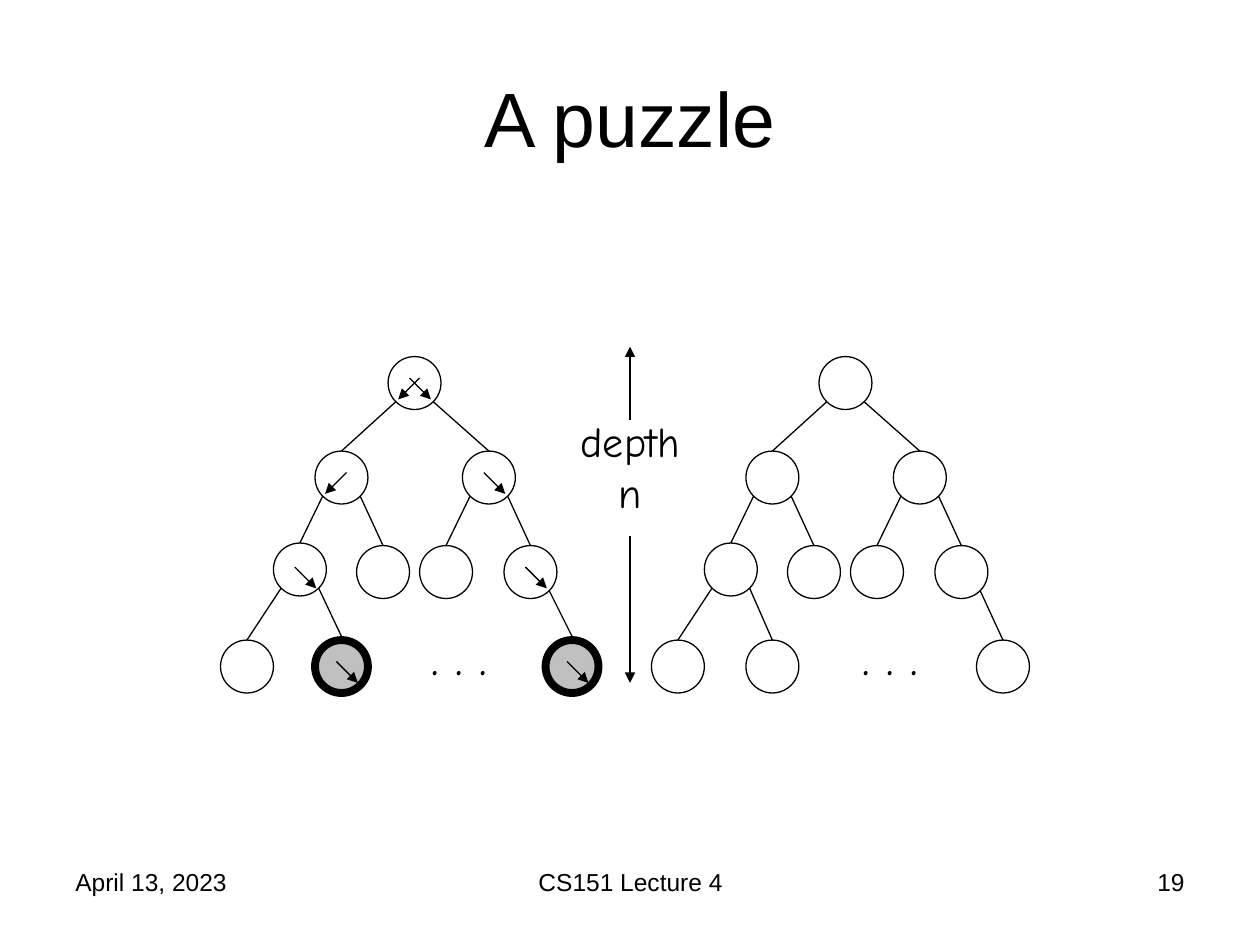
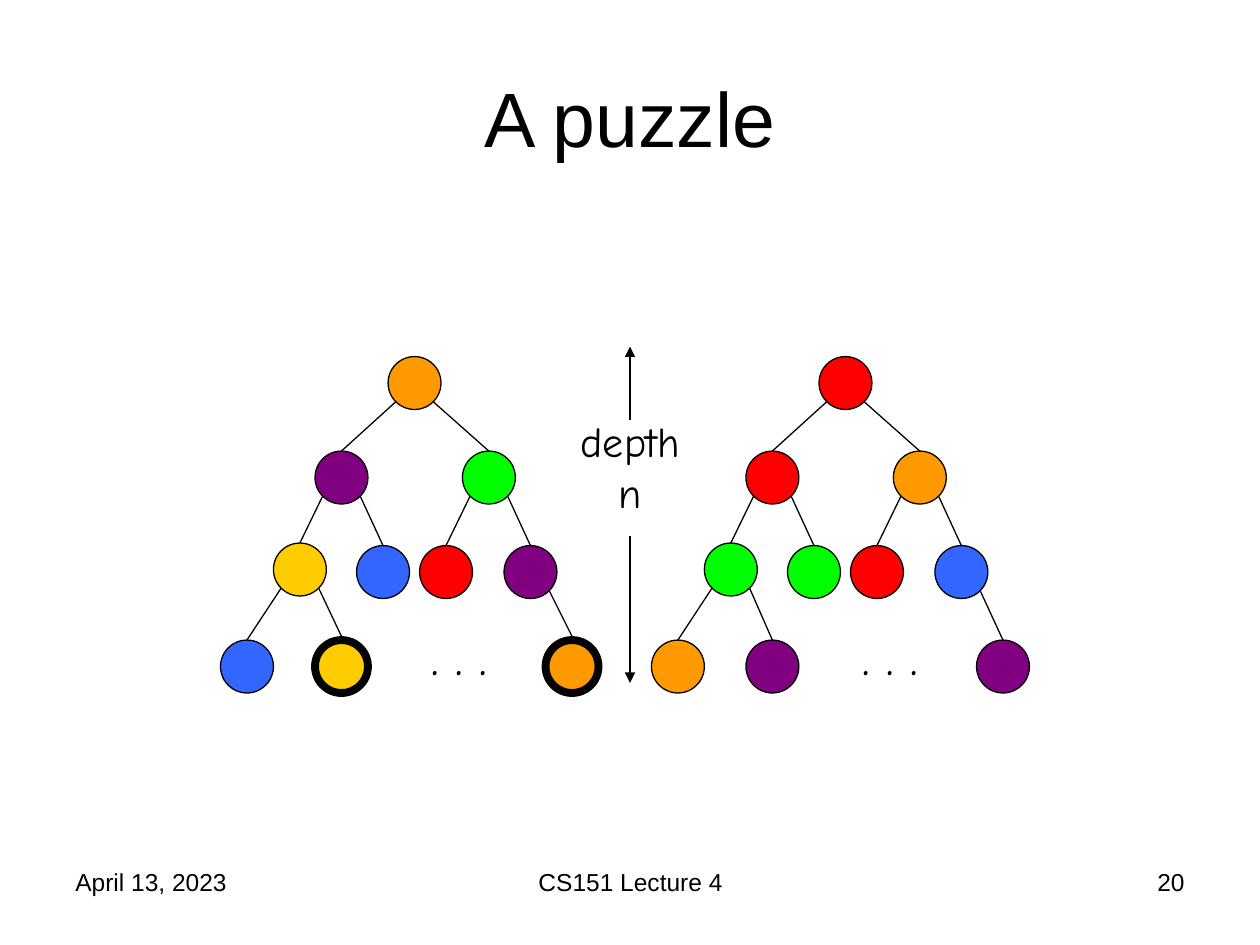
import pptx
import pptx.dml.color
import pptx.enum.shapes
import pptx.enum.text
import pptx.oxml.ns
import pptx.util
from lxml import etree

Inches = pptx.util.Inches
Align = pptx.enum.text.PP_ALIGN
Anchor = pptx.enum.text.MSO_ANCHOR

BLACK, GRAY = "000000", "C0C0C0"
ORANGE, PURPLE, GREEN = "FF9900", "800080", "00FF00"
GOLD, BLUE, RED = "FFCC00", "3366FF", "FF0000"

DIAMETER = 0.42
RADIUS = DIAMETER / 2
EDGE_OFFSET = 0.15
STEP = 0.17
TOP_LEVEL, LEVEL_GAP = 2.83, 0.75
LEFT_TREE, RIGHT_TREE = 1.75, 5.17

NODE_LEFTS = {
    "": 1.33, "L": 0.75, "R": 1.92, "LL": 0.42, "LR": 1.08,
    "RL": 1.58, "RR": 2.25, "LLL": 0, "LLR": 0.75, "RRR": 2.58,
}
NODE_NUDGES = {"LL": -0.02}
MARKED_LEAVES = ("LLR", "RRR")
MOVES = [("", "R"), ("", "L"), ("L", "L"), ("R", "R"), ("LL", "R"),
         ("RR", "R"), ("LLR", "R"), ("RRR", "R")]

LEFT_COLORS = dict(zip(NODE_LEFTS, [
    ORANGE, PURPLE, GREEN, GOLD, BLUE, RED, PURPLE, BLUE, GOLD, ORANGE]))
RIGHT_COLORS = dict(zip(NODE_LEFTS, [
    RED, RED, ORANGE, GREEN, GREEN, RED, BLUE, ORANGE, PURPLE, PURPLE]))


def color(value):
    return pptx.dml.color.RGBColor.from_string(value)


def level_top(node):
    return TOP_LEVEL + LEVEL_GAP * len(node)


class SlideBuilder:
    font = "Arial"
    tree_font = "Comic Neue"
    thin, thick = 0.75, 4.5

    def __init__(self, deck):
        self.deck = deck
        self.page = None

    def start_page(self, title):
        self.page = self.deck.slides.add_slide(self.deck.slide_layouts[5])
        box = self.page.shapes.title
        place = {"left": 0.5, "top": 0.3, "width": 9, "height": 1.25}
        for name, value in place.items():
            setattr(box, name, Inches(value))
        self.set_text(box.text_frame, title, 44, self.font, Align.CENTER, Anchor.MIDDLE)

    def set_text(self, frame, text, size, font, align, anchor=Anchor.TOP):
        frame.word_wrap = True
        frame.vertical_anchor = anchor
        para = frame.paragraphs[0]
        para.alignment = align
        span = para.add_run()
        span.text = text
        span.font.color.rgb = color(BLACK)
        values = {"name": font, "size": pptx.util.Pt(size)}
        for name, value in values.items():
            setattr(span.font, name, value)

    def text(self, text, left, top, width, height, size, font, align=Align.LEFT):
        box = self.page.shapes.add_textbox(
            Inches(left), Inches(top), Inches(width), Inches(height))
        self.set_text(box.text_frame, text, size, font, align)

    def outline(self, line, width):
        line.color.rgb = color(BLACK)
        line.width = pptx.util.Pt(width)

    def circle(self, left, top, fill, line_width):
        shape = self.page.shapes.add_shape(
            pptx.enum.shapes.MSO_SHAPE.OVAL,
            Inches(left), Inches(top), Inches(DIAMETER), Inches(DIAMETER))
        shape.shadow.inherit = False
        if fill:
            shape.fill.solid()
            shape.fill.fore_color.rgb = color(fill)
        else:
            shape.fill.background()
        self.outline(shape.line, line_width)

    def line(self, x1, y1, x2, y2, arrow=False):
        connector = self.page.shapes.add_connector(
            pptx.enum.shapes.MSO_CONNECTOR.STRAIGHT,
            Inches(x1), Inches(y1), Inches(x2), Inches(y2))
        self.outline(connector.line, self.thin)
        qn = pptx.oxml.ns.qn
        properties = connector._element.spPr
        if arrow:
            stroke = properties.find(qn("a:ln"))
            etree.SubElement(stroke, qn("a:tailEnd"), type="triangle")
        etree.SubElement(properties, qn("a:effectLst"))

    def tree(self, origin, colors, marked=()):
        tops = {node: level_top(node) + NODE_NUDGES.get(node, 0) for node in NODE_LEFTS}
        for node, offset in NODE_LEFTS.items():
            left, top = origin + offset, tops[node]
            self.circle(left, top, colors.get(node),
                        self.thick if node in marked else self.thin)
            if node:
                parent = node[:-1]
                side = EDGE_OFFSET if node[-1] == "R" else -EDGE_OFFSET
                self.line(origin + NODE_LEFTS[parent] + RADIUS + side,
                          tops[parent] + RADIUS + EDGE_OFFSET,
                          left + RADIUS, top - (0.03 if node in marked else 0))
        self.text(". . .", origin + 1.58, 4.92, 0.92, 0.57, 28, self.tree_font)

    def moves(self, origin):
        for node, direction in MOVES:
            left, top = origin + NODE_LEFTS[node], level_top(node) + STEP
            start, step = (0.17, STEP) if direction == "R" else (0.25, -STEP)
            self.line(left + start, top, left + start + step, top + STEP, arrow=True)

    def depth_scale(self):
        self.text("depth n", 4.42, 3.25, 1.17, 0.9, 24, self.tree_font, Align.CENTER)
        self.line(5, 4.25, 5, 5.42, arrow=True)
        self.line(5, 3.33, 5, 2.75, arrow=True)

    def footer(self, number):
        for text, left, width, align in (
                ("April 13, 2023", 0.5, 2.33, Align.LEFT),
                ("CS151 Lecture 4", 3.42, 3.17, Align.CENTER),
                (str(number), 7.17, 2.33, Align.RIGHT)):
            self.text(text, left, 6.83, width, 0.52, 14, self.font, align)

    def puzzle(self, number, left_colors, right_colors):
        self.start_page("A puzzle")
        self.tree(LEFT_TREE, left_colors, MARKED_LEAVES)
        self.tree(RIGHT_TREE, right_colors)
        self.depth_scale()
        self.footer(number)


def main():
    deck = pptx.Presentation()
    deck.slide_width, deck.slide_height = Inches(10), Inches(7.5)
    builder = SlideBuilder(deck)
    builder.puzzle(19, dict.fromkeys(MARKED_LEAVES, GRAY), {})
    builder.moves(LEFT_TREE)
    builder.puzzle(20, LEFT_COLORS, RIGHT_COLORS)
    deck.save("out.pptx")


if __name__ == "__main__":
    main()
